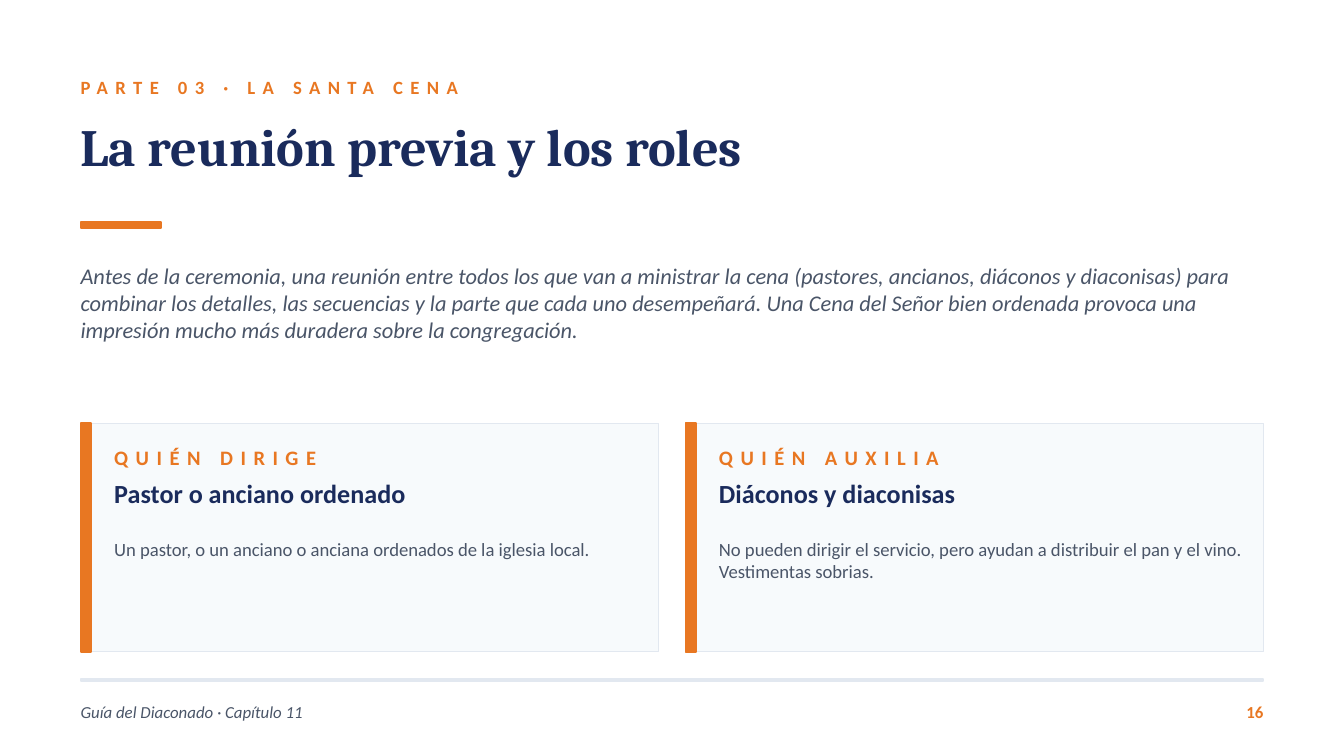
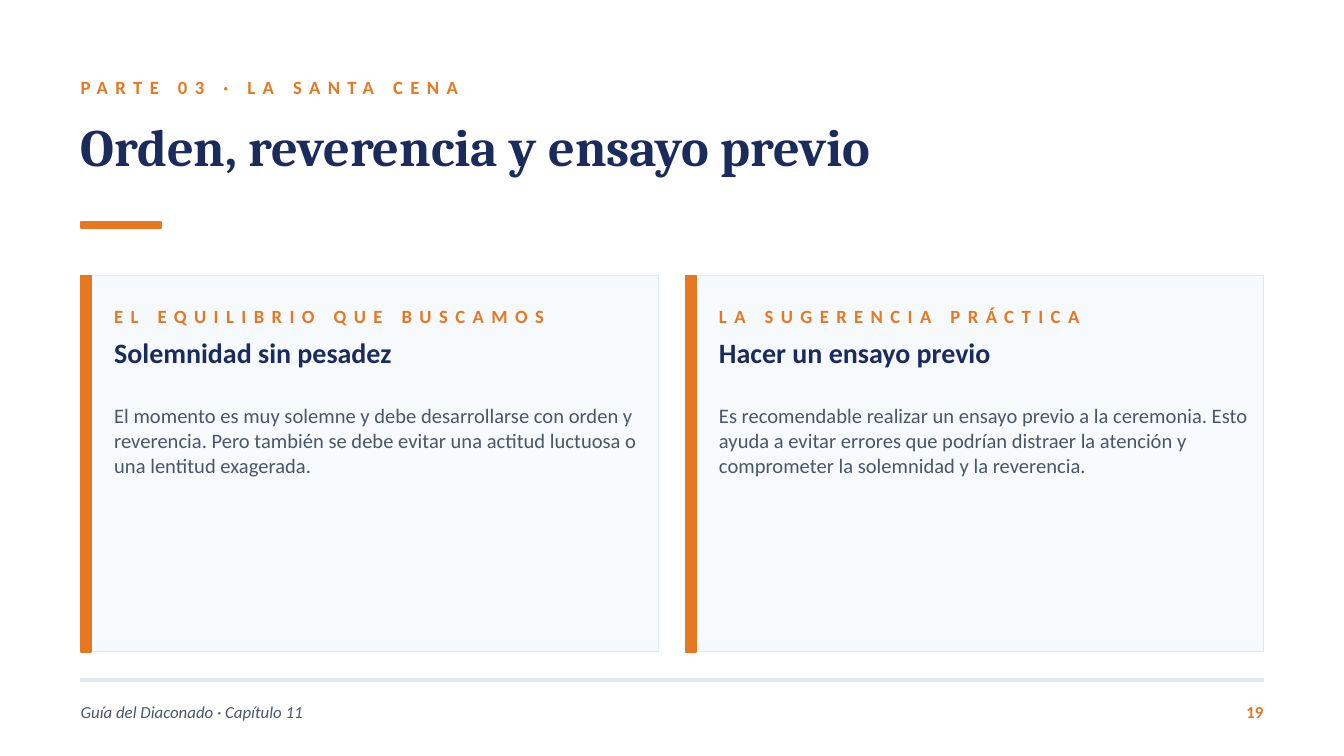
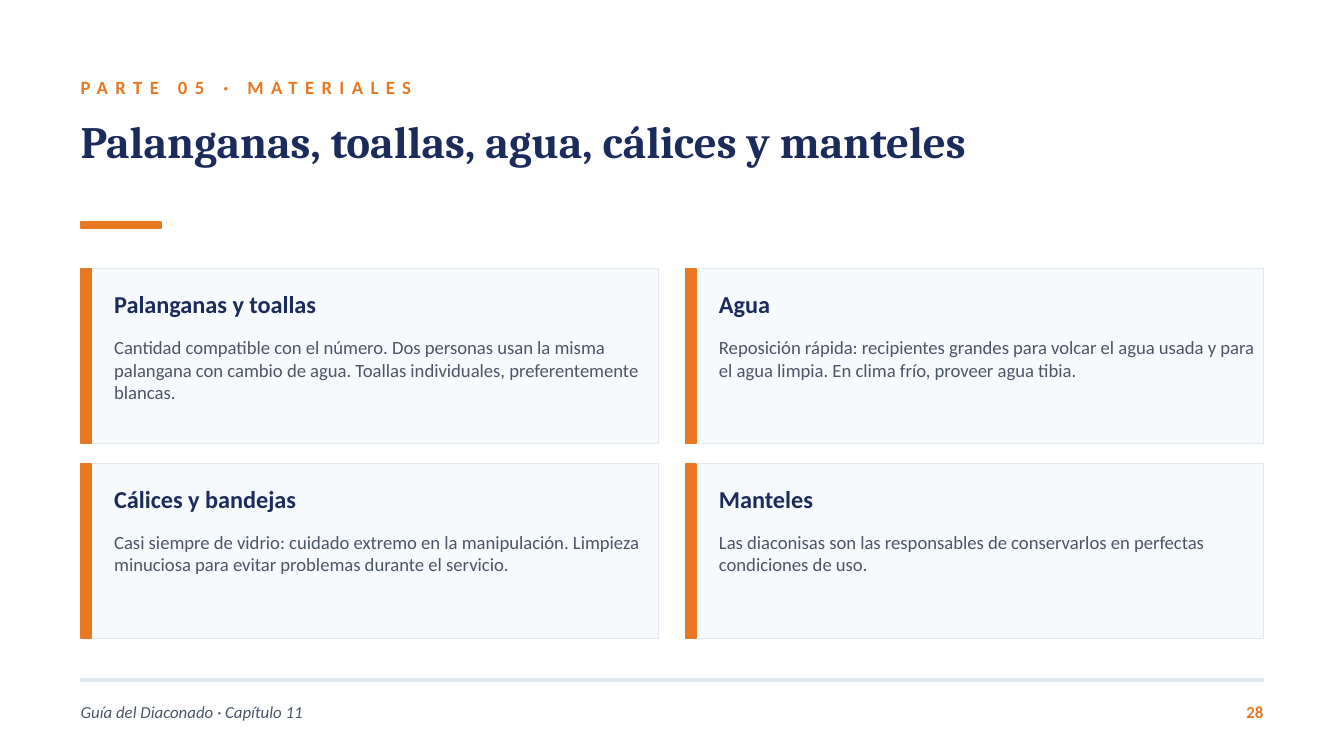
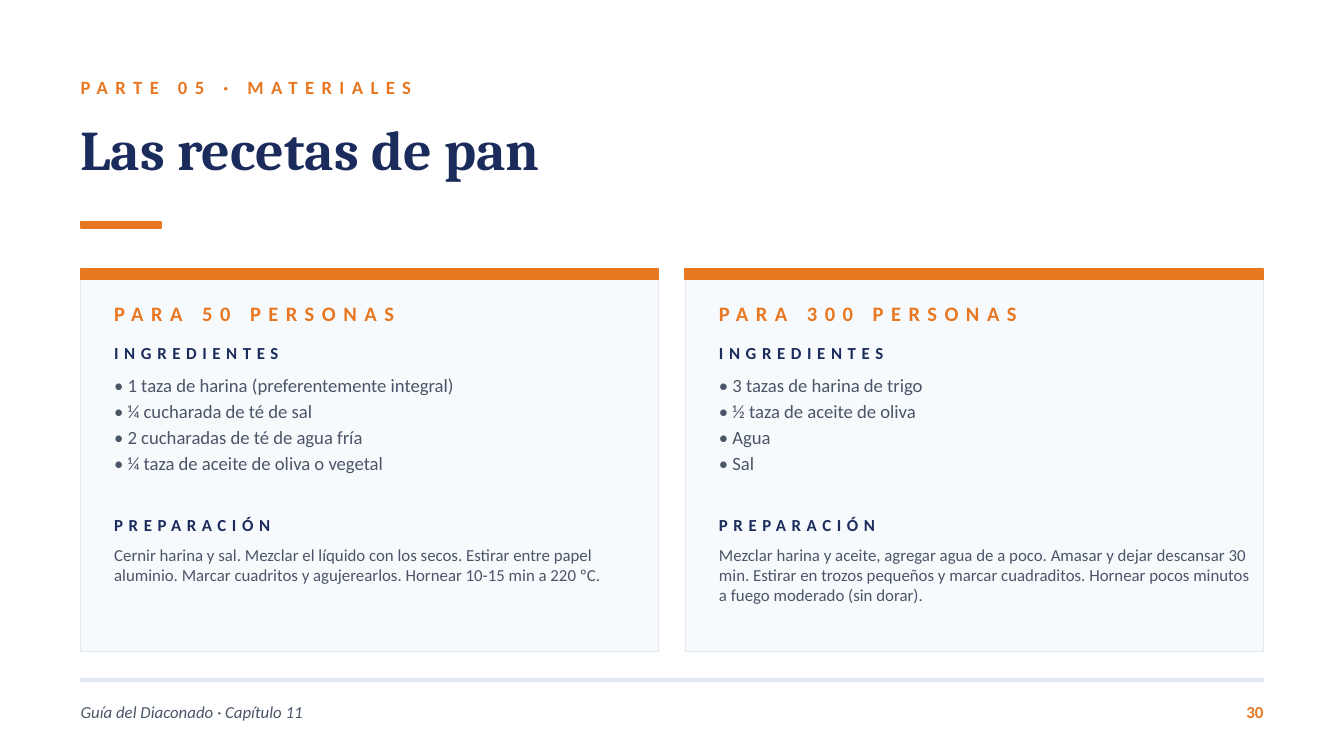
from pptx import Presentation
from pptx.dml.color import RGBColor
from pptx.enum.shapes import MSO_SHAPE
from pptx.enum.text import MSO_ANCHOR, PP_ALIGN
from pptx.util import Pt

COLORS = {
    "accent": "E87722",
    "navy": "1A2B5C",
    "body": "4A5568",
    "card": "F7FAFC",
    "rule": "E2E8F0",
    "background": "FFFFFF",
}
HEADING_FONT = "Cambria"
BODY_FONT = "Calibri"

MARGIN = 43.2
CONTENT_WIDTH = 633.6
GUTTER = 14.4
CARD_WIDTH = (CONTENT_WIDTH - GUTTER) / 2
CARD_PADDING = 18
CARD_TEXT_WIDTH = 288
BAR = 5.76
FOOTER = "Guía del Diaconado · Capítulo 11"


def column_left(column):
    return MARGIN + column * (CARD_WIDTH + GUTTER)


class Deck:
    """Holds the shared style and the slide being built."""

    def __init__(self):
        self.presentation = Presentation()
        self.presentation.slide_width = Pt(720)
        self.presentation.slide_height = Pt(405)
        self.slide = None

    def text(self, left, top, width, height, content, size, color="body", font=BODY_FONT,
             bold=False, italic=False, tracking=0, middle=False,
             align=PP_ALIGN.LEFT, space_after=None):
        """Add a text box; each line of content becomes a paragraph."""
        shape = self.slide.shapes.add_textbox(Pt(left), Pt(top), Pt(width), Pt(height))
        text_frame = shape.text_frame
        text_frame.word_wrap = True
        text_frame.margin_left = text_frame.margin_right = 0
        text_frame.margin_top = text_frame.margin_bottom = 0
        text_frame.vertical_anchor = MSO_ANCHOR.MIDDLE if middle else MSO_ANCHOR.TOP
        text_frame.text = content
        for paragraph in text_frame.paragraphs:
            paragraph.alignment = align
            if space_after is not None:
                paragraph.space_after = Pt(space_after)
            for run in paragraph.runs:
                run.font.name = font
                run.font.size = Pt(size)
                run.font.bold = bold
                run.font.italic = italic
                run.font.color.rgb = RGBColor.from_string(COLORS[color])
                if tracking:
                    run._r.get_or_add_rPr().set("spc", str(tracking * 100))

    def rectangle(self, left, top, width, height, fill, line=None, line_width=1):
        shape = self.slide.shapes.add_shape(
            MSO_SHAPE.RECTANGLE, Pt(left), Pt(top), Pt(width), Pt(height))
        shape.shadow.inherit = False
        shape.fill.solid()
        shape.fill.fore_color.rgb = RGBColor.from_string(COLORS[fill])
        shape.line.color.rgb = RGBColor.from_string(COLORS[line or fill])
        shape.line.width = Pt(line_width)

    def label(self, left, top, width, content, size=10):
        self.text(left, top, width, 21.6, content, size, "accent",
                  bold=True, tracking=4, middle=True)

    def start_slide(self, section, title, title_size, number):
        """Add a slide with its header and footer."""
        self.slide = self.presentation.slides.add_slide(self.presentation.slide_layouts[6])
        background = self.slide.background.fill
        background.solid()
        background.fore_color.rgb = RGBColor.from_string(COLORS["background"])
        self.label(MARGIN, 36, 504, section)
        self.text(MARGIN, 61.2, 648, 50.4, title, title_size, "navy", HEADING_FONT, bold=True)
        self.rectangle(MARGIN, 118.8, 43.2, 3.6, "accent")
        self.rectangle(MARGIN, 363.6, CONTENT_WIDTH, 1.44, "rule")
        self.text(MARGIN, 370.8, 432, 21.6, FOOTER, 9, italic=True, middle=True)
        self.text(640.8, 370.8, 36, 21.6, str(number), 9, "accent",
                  bold=True, middle=True, align=PP_ALIGN.RIGHT)

    def card(self, column, top, height, bar_on_top=False):
        """Draw a panel with its accent bar and return the left edge of its text."""
        left = column_left(column)
        self.rectangle(left, top, CARD_WIDTH, height, "card", "rule", 0.5)
        if bar_on_top:
            self.rectangle(left, top, CARD_WIDTH, BAR, "accent")
        else:
            self.rectangle(left, top, BAR, height, "accent")
        return left + CARD_PADDING

    def topic_card(self, column, top, height, heading, body, heading_top, body_top,
                   heading_size, body_size, label=None, label_size=10):
        """Add a card with an optional label; inner tops count from the card's top."""
        left = self.card(column, top, height)
        if label:
            self.label(left, top + heading_top - 21.6, CARD_TEXT_WIDTH, label, label_size)
        self.text(left, top + heading_top, CARD_TEXT_WIDTH, 28.8, heading,
                  heading_size, "navy", bold=True)
        self.text(left, top + body_top, CARD_TEXT_WIDTH, height - body_top - 7.2,
                  body, body_size)

    def recipe_card(self, column, servings, ingredients, preparation):
        top = 144
        left = self.card(column, top, 205.2, bar_on_top=True)
        self.label(left, top + 12.96, CARD_TEXT_WIDTH, servings, 11)
        for offset, heading in ((36, "INGREDIENTES"), (128.16, "PREPARACIÓN")):
            self.text(left, top + offset, CARD_TEXT_WIDTH, 18, heading, 9, "navy",
                      bold=True, tracking=3, middle=True)
        bullets = "\n".join(f"• {ingredient}" for ingredient in ingredients)
        self.text(left, top + 56.16, CARD_TEXT_WIDTH, 72, bullets, 10, space_after=2)
        self.text(left, top + 147.6, CARD_TEXT_WIDTH, 57.6, preparation, 9)


def add_roles(deck):
    deck.start_slide("PARTE 03 · LA SANTA CENA", "La reunión previa y los roles", 28, 16)
    deck.text(MARGIN, 140.4, 648, 72,
              "Antes de la ceremonia, una reunión entre todos los que van a ministrar la cena "
              "(pastores, ancianos, diáconos y diaconisas) para combinar los detalles, las "
              "secuencias y la parte que cada uno desempeñará. Una Cena del Señor bien ordenada "
              "provoca una impresión mucho más duradera sobre la congregación.",
              12, italic=True)
    roles = [
        ("QUIÉN DIRIGE", "Pastor o anciano ordenado",
         "Un pastor, o un anciano o anciana ordenados de la iglesia local."),
        ("QUIÉN AUXILIA", "Diáconos y diaconisas",
         "No pueden dirigir el servicio, pero ayudan a distribuir el pan y el vino. "
         "Vestimentas sobrias."),
    ]
    for column, (label, role, duty) in enumerate(roles):
        deck.topic_card(column, 226.8, 122.4, role, duty, heading_top=28.8, body_top=61.2,
                        heading_size=14, body_size=10, label=label, label_size=11)


def add_rehearsal(deck):
    deck.start_slide("PARTE 03 · LA SANTA CENA", "Orden, reverencia y ensayo previo", 28, 19)
    advice = [
        ("EL EQUILIBRIO QUE BUSCAMOS", "Solemnidad sin pesadez",
         "El momento es muy solemne y debe desarrollarse con orden y reverencia. Pero también "
         "se debe evitar una actitud luctuosa o una lentitud exagerada."),
        ("LA SUGERENCIA PRÁCTICA", "Hacer un ensayo previo",
         "Es recomendable realizar un ensayo previo a la ceremonia. Esto ayuda a evitar errores "
         "que podrían distraer la atención y comprometer la solemnidad y la reverencia."),
    ]
    for column, (label, heading, body) in enumerate(advice):
        deck.topic_card(column, 147.6, 201.6, heading, body, heading_top=32.4, body_top=68.4,
                        heading_size=15, body_size=11, label=label)


def add_materials(deck):
    deck.start_slide("PARTE 05 · MATERIALES",
                     "Palanganas, toallas, agua, cálices y manteles", 24, 28)
    materials = [
        ("Palanganas y toallas",
         "Cantidad compatible con el número. Dos personas usan la misma palangana con cambio "
         "de agua. Toallas individuales, preferentemente blancas."),
        ("Agua",
         "Reposición rápida: recipientes grandes para volcar el agua usada y para el agua "
         "limpia. En clima frío, proveer agua tibia."),
        ("Cálices y bandejas",
         "Casi siempre de vidrio: cuidado extremo en la manipulación. Limpieza minuciosa para "
         "evitar problemas durante el servicio."),
        ("Manteles",
         "Las diaconisas son las responsables de conservarlos en perfectas condiciones de uso."),
    ]
    for index, (material, care) in enumerate(materials):
        row, column = divmod(index, 2)
        deck.topic_card(column, 144 + row * 104.4, 93.6, material, care, heading_top=10.8,
                        body_top=36, heading_size=13, body_size=10)


def add_recipes(deck):
    deck.start_slide("PARTE 05 · MATERIALES", "Las recetas de pan", 30, 30)
    recipes = [
        ("PARA 50 PERSONAS",
         ["1 taza de harina (preferentemente integral)", "¼ cucharada de té de sal",
          "2 cucharadas de té de agua fría", "¼ taza de aceite de oliva o vegetal"],
         "Cernir harina y sal. Mezclar el líquido con los secos. Estirar entre papel aluminio. "
         "Marcar cuadritos y agujerearlos. Hornear 10-15 min a 220 ºC."),
        ("PARA 300 PERSONAS",
         ["3 tazas de harina de trigo", "½ taza de aceite de oliva", "Agua", "Sal"],
         "Mezclar harina y aceite, agregar agua de a poco. Amasar y dejar descansar 30 min. "
         "Estirar en trozos pequeños y marcar cuadraditos. Hornear pocos minutos a fuego "
         "moderado (sin dorar)."),
    ]
    for column, recipe in enumerate(recipes):
        deck.recipe_card(column, *recipe)


def main():
    deck = Deck()
    add_roles(deck)
    add_rehearsal(deck)
    add_materials(deck)
    add_recipes(deck)
    deck.presentation.save("out.pptx")


if __name__ == "__main__":
    main()
